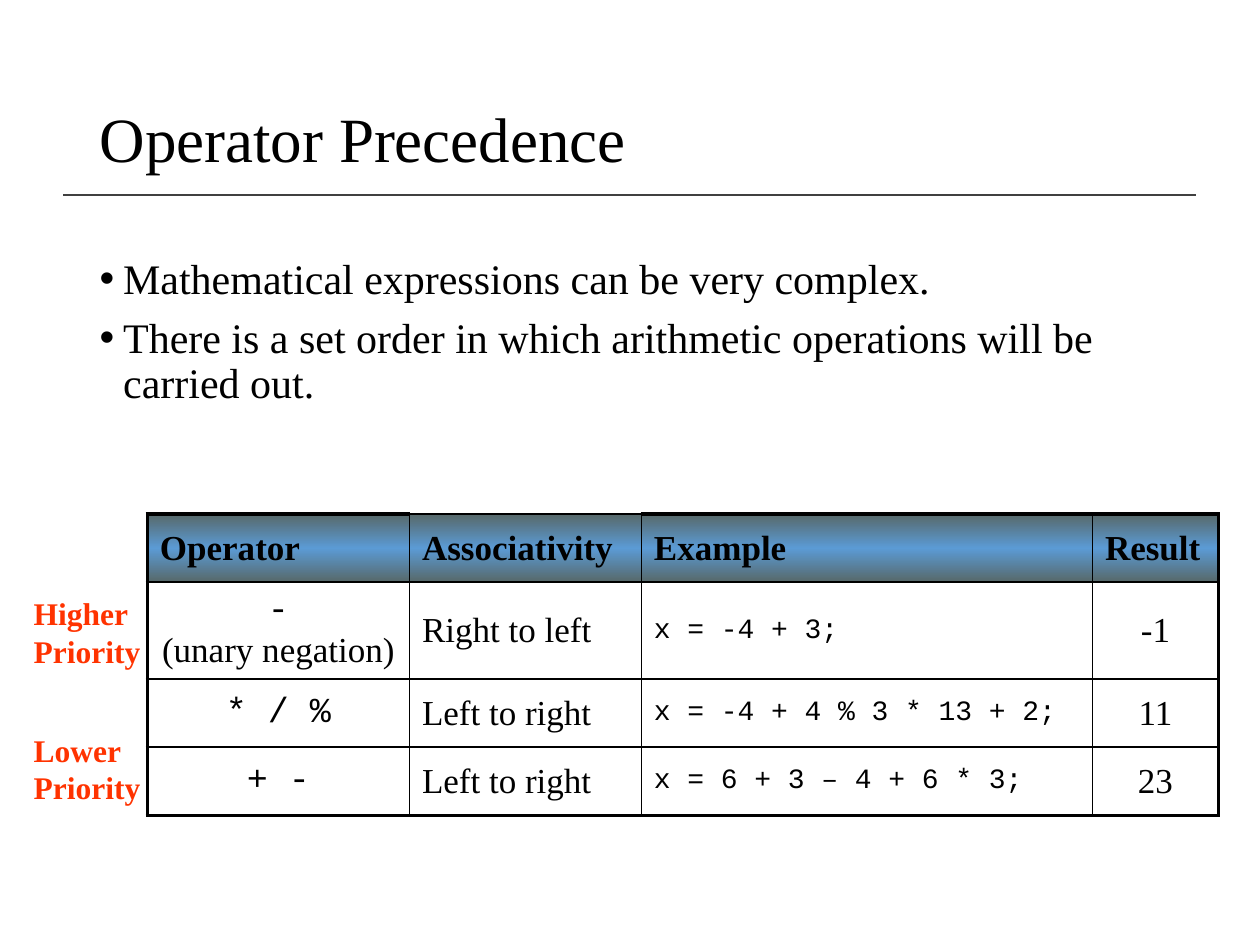
from typing import NamedTuple

from lxml import etree
from pptx import Presentation
from pptx import util as u
from pptx.dml.color import RGBColor
from pptx.enum import shapes, text
from pptx.oxml import parse_xml
from pptx.oxml.ns import nsdecls, qn

Pt = u.Pt
COLORS = {"ink": "000000", "rule": "404040", "priority": "FF3300",
          "header_edge": "576869", "header_middle": "5B9BD5"}
SERIF, MONO = "Times New Roman", "Courier New"
LEFT, CENTER = text.PP_ALIGN.LEFT, text.PP_ALIGN.CENTER
THIN, THICK = 1, 2.25


class Style(NamedTuple):
    size: float
    font: str = SERIF
    bold: bool = False
    color: str = "ink"


class Label(NamedTuple):
    lines: tuple[str, ...]
    top: float


class Operator(NamedTuple):
    symbol: str
    note: str
    associativity: str
    example: str
    result: str


HEADER = Style(20, bold=True)
BODY = Style(20)
SYMBOL = Style(20, MONO)
CODE = Style(16, MONO)
PRIORITY = Style(18, bold=True, color="priority")

BULLETS = ("Mathematical expressions can be very complex.",
           "There is a set order in which arithmetic operations will be carried out.")
HEADINGS = ("Operator", "Associativity", "Example", "Result")
OPERATORS = (
    Operator("-", "(unary negation)", "Right to left", "x = -4 + 3;", "-1"),
    Operator("* / %", "", "Left to right", "x = -4 + 4 % 3 * 13 + 2;", "11"),
    Operator("+ -", "", "Left to right", "x = 6 + 3 – 4 + 6 * 3;", "23"),
)
LABELS = (Label(("Higher", "Priority"), 336.2), Label(("Lower", "Priority"), 414))
COLUMNS = (149.8, 132.5, 257.8, 72)
ROWS = (38.9, 55.4, 38.9, 38.9)


def add_span(para, words: str, style: Style) -> None:
    span = para.add_run()
    span.text = words
    span.font.name = style.font
    span.font.size = Pt(style.size)
    span.font.bold = style.bold
    span.font.color.rgb = RGBColor.from_string(COLORS[style.color])


def place(box, left: float, top: float, width: float, height: float) -> None:
    box.left, box.top, box.width, box.height = map(Pt, (left, top, width, height))


def next_para(frame, index: int):
    return frame.add_paragraph() if index else frame.paragraphs[0]


def add_title(page) -> None:
    title = page.shapes.title
    place(title, 49.7, 28.8, 620.6, 104.4)
    frame = title.text_frame
    frame.vertical_anchor = text.MSO_ANCHOR.MIDDLE
    frame.auto_size = text.MSO_AUTO_SIZE.NONE
    para = frame.paragraphs[0]
    para.alignment, para.line_spacing = LEFT, 0.9
    add_span(para, "Operator Precedence", Style(36))


def add_bullets(page) -> None:
    body = page.placeholders[1]
    place(body, 49.7, 144, 620.6, 342.7)
    frame = body.text_frame
    frame.auto_size = text.MSO_AUTO_SIZE.NONE
    for index, words in enumerate(BULLETS):
        para = next_para(frame, index)
        para.line_spacing, para.space_before = 0.9, Pt(7.5)
        add_span(para, words, Style(24))
        properties = para._p.get_or_add_pPr()
        properties.set("marL", str(Pt(13.5)))
        properties.set("indent", str(-Pt(13.5)))
        etree.SubElement(properties, qn("a:buFont")).set("typeface", "Arial")
        etree.SubElement(properties, qn("a:buChar")).set("char", "•")


def add_rule(page) -> None:
    rule = page.shapes.add_connector(shapes.MSO_CONNECTOR.STRAIGHT,
                                     Pt(36), Pt(111.6), Pt(683.3), Pt(111.6))
    rule.line.width = Pt(1)
    rule.line.color.rgb = RGBColor.from_string(COLORS["rule"])
    etree.SubElement(rule._element.spPr, qn("a:effectLst"))


def set_borders(cell, widths: dict[str, float]) -> None:
    properties = cell._tc.get_or_add_tcPr()
    for index, (side, width) in enumerate(widths.items()):
        properties.insert(index, parse_xml(
            f'<a:ln{side} {nsdecls("a")} w="{Pt(width)}"><a:solidFill>'
            f'<a:srgbClr val="{COLORS["ink"]}"/></a:solidFill></a:ln{side}>'))


def set_header_fill(cell) -> None:
    stops = ((0, "header_edge"), (50, "header_middle"), (100, "header_edge"))
    stop_xml = "".join(f'<a:gs pos="{percent * 1000}"><a:srgbClr val="{COLORS[name]}"/></a:gs>'
                       for percent, name in stops)
    cell._tc.get_or_add_tcPr().append(parse_xml(
        f'<a:gradFill {nsdecls("a")} rotWithShape="1"><a:gsLst>{stop_xml}</a:gsLst>'
        '<a:lin ang="5400000" scaled="1"/></a:gradFill>'))


def fill_cell(cell, words: str, style: Style, alignment) -> None:
    cell.vertical_anchor = text.MSO_ANCHOR.MIDDLE
    para = cell.text_frame.paragraphs[0]
    para.alignment = alignment
    add_span(para, words, style)


def add_operator_table(page) -> None:
    table = page.shapes.add_table(len(ROWS), len(COLUMNS), Pt(84.2), Pt(293.8),
                                  Pt(sum(COLUMNS)), Pt(sum(ROWS))).table
    table.first_row = table.horz_banding = False
    for column, width in zip(table.columns, COLUMNS):
        column.width = Pt(width)
    for row, height in zip(table.rows, ROWS):
        row.height = Pt(height)

    for c, heading in enumerate(HEADINGS):
        fill_cell(table.cell(0, c), heading, HEADER, LEFT)
        set_header_fill(table.cell(0, c))
    for r, operator in enumerate(OPERATORS, start=1):
        cells = [table.cell(r, c) for c in range(len(COLUMNS))]
        fill_cell(cells[0], operator.symbol, SYMBOL, CENTER)
        if operator.note:
            para = cells[0].text_frame.paragraphs[0]
            para.add_line_break()
            add_span(para, operator.note, BODY)
        fill_cell(cells[1], operator.associativity, BODY, LEFT)
        fill_cell(cells[2], operator.example, CODE, LEFT)
        fill_cell(cells[3], operator.result, BODY, CENTER)
        for cell in cells:
            cell.fill.background()

    last_row, last_column = len(ROWS) - 1, len(COLUMNS) - 1
    for r in range(len(ROWS)):
        for c in range(len(COLUMNS)):
            thick = {"L": c == 0, "R": c == last_column,
                     "T": r == 0 and HEADINGS[c] != "Associativity", "B": r == last_row}
            set_borders(table.cell(r, c),
                        {side: THICK if outer else THIN for side, outer in thick.items()})


def add_label(page, label: Label) -> None:
    box = page.shapes.add_textbox(Pt(12.2), Pt(label.top), Pt(75.6), Pt(50.4))
    frame = box.text_frame
    frame.word_wrap = False
    frame.auto_size = text.MSO_AUTO_SIZE.SHAPE_TO_FIT_TEXT
    for index, words in enumerate(label.lines):
        add_span(next_para(frame, index), words, PRIORITY)


def main() -> None:
    deck = Presentation()
    deck.slide_width, deck.slide_height = Pt(720), Pt(540)
    page = deck.slides.add_slide(deck.slide_layouts[1])
    add_rule(page)
    add_title(page)
    add_bullets(page)
    add_operator_table(page)
    for label in LABELS:
        add_label(page, label)
    deck.save("out.pptx")


if __name__ == "__main__":
    main()
